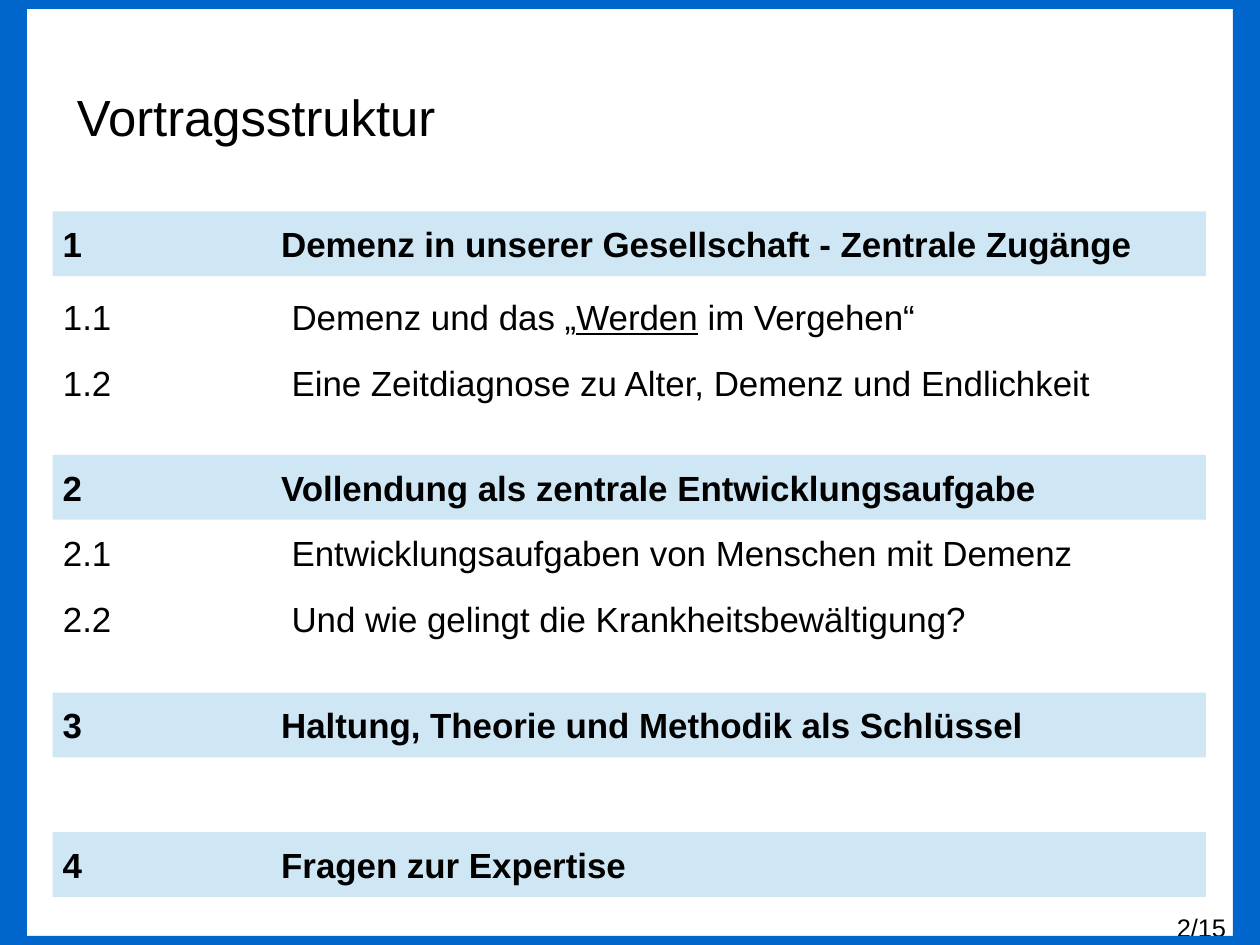
from pptx import Presentation
from pptx.dml.color import RGBColor
from pptx.enum import shapes, text
from pptx.oxml import xmlchemy as x
from pptx.util import Cm, Pt

BLACK = RGBColor(0x00, 0x00, 0x00)
BLUE = RGBColor(0x00, 0x66, 0xCC)
PALE = RGBColor(0xCF, 0xE7, 0xF5)

TITLE = "Vortragsstruktur"
PAGE = "2/15"
SECTIONS = [
    (4.7, "1", "Demenz in unserer Gesellschaft - Zentrale Zugänge", 6.57, [
        ("1.1", ["Demenz und das „", "Werden", " im Vergehen“"]),
        ("1.2", ["Eine Zeitdiagnose zu Alter, Demenz und Endlichkeit"]),
    ]),
    (10.11, "2", "Vollendung als zentrale Entwicklungsaufgabe", 11.82, [
        ("2.1", ["Entwicklungsaufgaben von Menschen mit Demenz"]),
        ("2.2", ["Und wie gelingt die Krankheitsbewältigung?"]),
    ]),
    (15.39, "3", "Haltung, Theorie und Methodik als Schlüssel", 0, []),
    (18.49, "4", "Fragen zur Expertise", 0, []),
]

W, H = 28, 21
SIDE, EDGE = 0.6, 0.2
BAR_X, BAR_W, BAR_H, BAR_INSET = 1.17, 25.63, 1.44, 0.22
ITEM_X, ITEM_W, ITEM_H = 1.4, 25.4, 2.4
TAB = 5.08


def add_text(p, content, size=22, bold=False, underline=None):
    r = p.add_run()
    r.text = content
    r.font.name, r.font.size, r.font.bold = "Arial", Pt(size), bold
    r.font.underline = underline
    r.font.color.rgb = BLACK


def set_frame(tf, left=0.0, anchor=text.MSO_ANCHOR.MIDDLE, wrap=True):
    tf.margin_left = Cm(left)
    tf.margin_right = tf.margin_top = tf.margin_bottom = 0
    tf.vertical_anchor, tf.word_wrap = anchor, wrap
    tf.auto_size = text.MSO_AUTO_SIZE.NONE
    tf.paragraphs[0].alignment = text.PP_ALIGN.LEFT


def set_tab(p, pos):
    tabs = x.OxmlElement("a:tabLst")
    tab = x.OxmlElement("a:tab")
    tab.set("pos", str(Cm(pos)))
    tab.set("algn", "l")
    tabs.append(tab)
    p._p.get_or_add_pPr().append(tabs)


def add_rect(s, left, top, width, height, color):
    sp = s.shapes.add_shape(shapes.MSO_SHAPE.RECTANGLE,
                            Cm(left), Cm(top), Cm(width), Cm(height))
    sp.shadow.inherit = False
    sp.fill.solid()
    sp.fill.fore_color.rgb = color
    sp.line.fill.background()
    return sp


prs = Presentation()
prs.slide_width, prs.slide_height = Cm(W), Cm(H)
s = prs.slides.add_slide(prs.slide_layouts[5])

title = s.shapes.title
title.left, title.top, title.width, title.height = Cm(1.4), Cm(0.84), Cm(25.2), Cm(3.5)
set_frame(title.text_frame, left=0.31)
add_text(title.text_frame.paragraphs[0], TITLE, size=32)

for bar_y, number, heading, items_y, items in SECTIONS:
    tf = add_rect(s, BAR_X, bar_y, BAR_W, BAR_H, PALE).text_frame
    set_frame(tf, left=BAR_INSET)
    p = tf.paragraphs[0]
    set_tab(p, TAB - BAR_INSET)
    add_text(p, f"{number}\t{heading}", bold=True)
    if not items:
        continue
    tf = s.shapes.add_textbox(Cm(ITEM_X), Cm(items_y), Cm(ITEM_W), Cm(ITEM_H)).text_frame
    set_frame(tf, anchor=text.MSO_ANCHOR.TOP)
    for i, (number, parts) in enumerate(items):
        p = tf.add_paragraph() if i else tf.paragraphs[0]
        p.space_after = Pt(15)
        set_tab(p, TAB)
        add_text(p, f"{number}\t")
        for j, part in enumerate(parts):
            add_text(p, part, underline=j == 1)

tf = s.shapes.add_textbox(Cm(26), Cm(20.2), Cm(1.4), Cm(0.8)).text_frame
set_frame(tf, wrap=False)
tf.paragraphs[0].alignment = text.PP_ALIGN.CENTER
add_text(tf.paragraphs[0], PAGE, size=16)

for left in (0, W - SIDE):
    add_rect(s, left, 0, SIDE, H, BLUE)
for top in (0, H - EDGE):
    add_rect(s, SIDE, top, W - 2 * SIDE, EDGE, BLUE)

prs.save("out.pptx")
